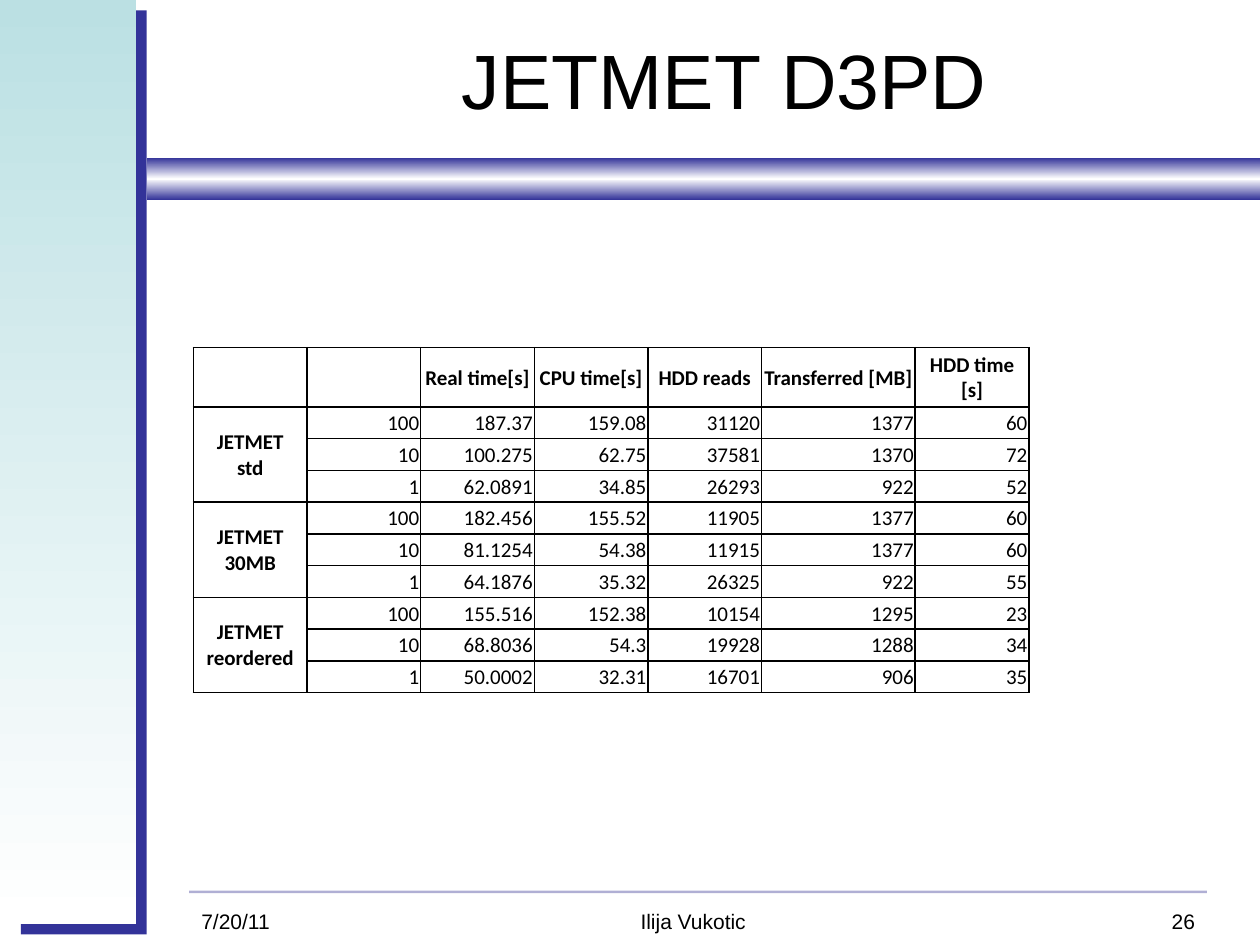
"""Build the JETMET D3PD timing table slide."""
from copy import deepcopy

from lxml.etree import SubElement
from pptx import Presentation
from pptx.dml.color import RGBColor
from pptx.enum.shapes import MSO_CONNECTOR, MSO_SHAPE
from pptx.enum.text import MSO_ANCHOR, MSO_AUTO_SIZE, PP_ALIGN as AL
from pptx.oxml.ns import qn
from pptx.util import Cm, Pt

BLACK = RGBColor(0x00, 0x00, 0x00)
WHITE = RGBColor(0xFF, 0xFF, 0xFF)
BLUE = RGBColor(0x33, 0x33, 0x99)
TEAL = RGBColor(0xBB, 0xE0, 0xE3)
NAVY = RGBColor(0x1F, 0x1A, 0x86)

TITLE = "JETMET D3PD"
FOOTER = [
    ("7/20/11", 3.81, 5.29, AL.LEFT),
    ("Ilija Vukotic", 9.74, 8.47, AL.CENTER),
    ("26", 19.05, 5.29, AL.RIGHT),
]
HEADER = ["", "", "Real time[s]", "CPU time[s]", "HDD reads", "Transferred [MB]", "HDD time [s]"]
GROUPS = {
    "JETMET\nstd": [
        ("100", "187.37", "159.08", "31120", "1377", "60"),
        ("10", "100.275", "62.75", "37581", "1370", "72"),
        ("1", "62.0891", "34.85", "26293", "922", "52"),
    ],
    "JETMET\n30MB": [
        ("100", "182.456", "155.52", "11905", "1377", "60"),
        ("10", "81.1254", "54.38", "11915", "1377", "60"),
        ("1", "64.1876", "35.32", "26325", "922", "55"),
    ],
    "JETMET\nreordered": [
        ("100", "155.516", "152.38", "10154", "1295", "23"),
        ("10", "68.8036", "54.3", "19928", "1288", "34"),
        ("1", "50.0002", "32.31", "16701", "906", "35"),
    ],
}
COL_W = [2.29] * 5 + [3.1, 2.29]
HEAD_H, ROW_H = 1.19, 0.64
BARS = [
    (MSO_SHAPE.RECTANGLE, (0.42, 0.21, 2.54, 18.63), [BLUE]),
    (MSO_SHAPE.RECTANGLE, (0, 0, 2.75, 18.63), [TEAL, WHITE]),
    (MSO_SHAPE.RECTANGLE, (2.96, 3.18, 22.44, 0.85), [BLUE, WHITE, BLUE]),
]


def write(tf, text, size=12, font="Arial", bold=False, align=AL.LEFT):
    """Fill a text frame, one paragraph for each line of the text."""
    tf.text = text
    for p in tf.paragraphs:
        p.alignment = align
        p.font.size, p.font.name, p.font.bold = Pt(size), font, bold
        p.font.color.rgb = BLACK


def add_bar(slide, kind, box, colors):
    """Add a borderless shape with a solid or vertical gradient fill."""
    sp = slide.shapes.add_shape(kind, *map(Cm, box))
    sp.shadow.inherit = False
    sp.line.fill.background()
    if len(colors) == 1:
        sp.fill.solid()
        sp.fill.fore_color.rgb = colors[0]
        return
    sp.fill.gradient()
    sp.fill.gradient_angle = 270
    stops = sp._element.spPr.find(".//" + qn("a:gsLst"))
    while len(stops) < len(colors):
        stops.append(deepcopy(stops[-1]))
    for i, (stop, color) in enumerate(zip(sp.fill.gradient_stops, colors)):
        stop.position = i / (len(colors) - 1)
        stop.color.rgb = color


def add_rule(slide):
    """Add the translucent line above the footer."""
    line = slide.shapes.add_connector(MSO_CONNECTOR.STRAIGHT, Cm(3.81), Cm(17.98), Cm(24.33), Cm(17.98))
    line.line.width = Pt(1.5)
    line.line.color.rgb = NAVY
    spPr = line._element.spPr
    SubElement(spPr.find(".//" + qn("a:srgbClr")), qn("a:alpha"), val="35000")
    SubElement(spPr, qn("a:effectLst"))


def format_cell(cell, text, **fmt):
    """Write a cell and give it thin margins, black borders and a white fill."""
    write(cell.text_frame, text, font="Calibri", **fmt)
    cell.vertical_anchor = MSO_ANCHOR.MIDDLE
    cell.margin_left = cell.margin_right = cell.margin_top = Cm(0.03)
    cell.margin_bottom = 0
    tcPr = cell._tc.get_or_add_tcPr()
    for side in "LRTB":
        ln = SubElement(tcPr, qn("a:ln" + side), w=str(Pt(1)))
        SubElement(SubElement(ln, qn("a:solidFill")), qn("a:srgbClr"), val=str(BLACK))
    cell.fill.solid()
    cell.fill.fore_color.rgb = WHITE


def add_timings(slide):
    """Add the table with one merged label for each group of rows."""
    rows = [HEADER]
    for label, values in GROUPS.items():
        rows += [(label if i == 0 else "", *row) for i, row in enumerate(values)]
    heights = [HEAD_H] + [ROW_H] * (len(rows) - 1)
    frame = slide.shapes.add_table(len(rows), len(COL_W), Cm(3.9), Cm(7.01), Cm(sum(COL_W)), Cm(sum(heights)))
    table = frame.table
    table.first_row = table.horz_banding = False
    for col, width in zip(table.columns, COL_W):
        col.width = Cm(width)
    for r, (row, height) in enumerate(zip(rows, heights)):
        table.rows[r].height = Cm(height)
        for c, text in enumerate(row):
            label = r == 0 or c == 0
            format_cell(table.cell(r, c), text, bold=label, align=AL.CENTER if label else AL.RIGHT)
    top = 1
    for values in GROUPS.values():
        table.cell(top, 0).merge(table.cell(top + len(values) - 1, 0))
        top += len(values)


def main():
    prs = Presentation()
    prs.slide_width, prs.slide_height = Cm(25.4), Cm(19.05)
    slide = prs.slides.add_slide(prs.slide_layouts[5])
    add_rule(slide)
    for bar in BARS:
        add_bar(slide, *bar)
    title = slide.shapes.title
    title.left, title.top, title.width, title.height = Cm(3.81), Cm(0), Cm(21.59), Cm(3.18)
    title.text_frame.auto_size = MSO_AUTO_SIZE.NONE
    title.text_frame.vertical_anchor = MSO_ANCHOR.MIDDLE
    write(title.text_frame, TITLE, size=44, align=AL.CENTER)
    for text, left, width, align in FOOTER:
        tf = slide.shapes.add_textbox(Cm(left), Cm(18.2), Cm(width), Cm(0.85)).text_frame
        tf.word_wrap = True
        write(tf, text, align=align)
    add_timings(slide)
    prs.save("out.pptx")


if __name__ == "__main__":
    main()
